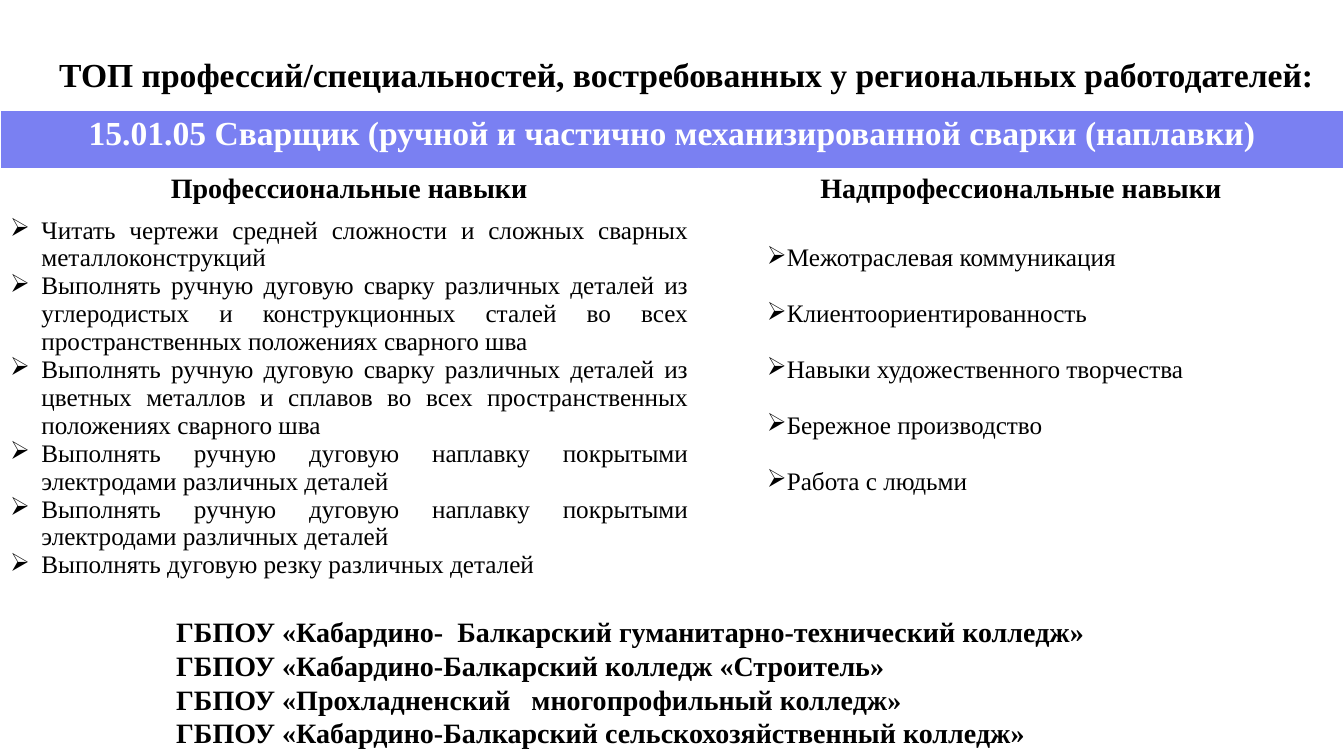
"""Build a slide on the skills of a welder and the colleges that teach the trade."""
from lxml.etree import SubElement
from pptx import Presentation
from pptx.dml.color import RGBColor
from pptx.enum.text import MSO_AUTO_SIZE, PP_ALIGN
from pptx.oxml.ns import qn
from pptx.util import Cm, Pt

COLORS = {"ink": "000000", "paper": "FFFFFF", "band": "7A80F2"}
FONT = "Times New Roman"


def write(frame, lines, size, bold=False, ink="ink", indent=None, **format):
    frame.word_wrap = True
    for i, line in enumerate(lines):
        para = frame.add_paragraph() if i else frame.paragraphs[0]
        for key, value in format.items():
            setattr(para, key, value)
        if indent:
            props = para._p.get_or_add_pPr()
            for key, value in zip(("marL", "indent"), indent):
                props.set(key, str(Cm(value)))
            SubElement(props, qn("a:buChar"), char="➢")
        run = para.add_run()
        run.text = line
        for key, value in {"name": FONT, "size": Pt(size), "bold": bold}.items():
            setattr(run.font, key, value)
        run.font.color.rgb = RGBColor.from_string(COLORS[ink])


def edge(cell, sides):
    props = cell._tc.get_or_add_tcPr()
    for side in sides:
        line = SubElement(props, qn(f"a:ln{side}"), w=str(Pt(1)))
        fill = SubElement(line, qn("a:solidFill"))
        SubElement(fill, qn("a:srgbClr"), val=COLORS["paper"])


deck = Presentation()
deck.slide_width, deck.slide_height = Cm(33.87), Cm(19.05)
slide = deck.slides.add_slide(deck.slide_layouts[6])

title = ["ТОП профессий/специальностей, востребованных у региональных работодателей:"]
schools = [
    "ГБПОУ «Кабардино-  Балкарский гуманитарно-технический колледж»",
    "ГБПОУ «Кабардино-Балкарский колледж «Строитель»",
    "ГБПОУ «Прохладненский   многопрофильный колледж»",
    "ГБПОУ «Кабардино-Балкарский сельскохозяйственный колледж»",
]
trade = ["15.01.05 Сварщик (ручной и частично механизированной сварки (наплавки)"]
heads = ["Профессиональные навыки", "Надпрофессиональные навыки"]
hard = [
    "Читать чертежи средней сложности и сложных сварных металлоконструкций",
    "Выполнять ручную дуговую сварку различных деталей из углеродистых и "
    "конструкционных сталей во всех пространственных положениях сварного шва",
    "Выполнять ручную дуговую сварку различных деталей из цветных металлов и "
    "сплавов во всех пространственных положениях сварного шва",
    "Выполнять ручную дуговую наплавку покрытыми электродами различных деталей",
    "Выполнять ручную дуговую наплавку покрытыми электродами различных деталей",
    "Выполнять дуговую резку различных деталей",
]
soft = [
    "Межотраслевая коммуникация",
    "Клиентоориентированность",
    "Навыки художественного творчества",
    "Бережное производство",
    "Работа с людьми",
]

widths, heights = (17.6, 16.26), (1.45, 1.09, 3.84)
table = slide.shapes.add_table(
    3, 2, Cm(0), Cm(2.79), Cm(sum(widths)), Cm(sum(heights))
).table
for key in ("first_row", "horz_banding"):
    setattr(table, key, False)
for column, width in zip(table.columns, widths):
    column.width = Cm(width)
for row, height in zip(table.rows, heights):
    row.height = Cm(height)

band = table.cell(0, 0)
band.merge(table.cell(0, 1))
edge(band, "LRT")
edge(table.cell(0, 1), "RT")
for cell in table.iter_cells():
    cell.fill.background()
band.fill.solid()
band.fill.fore_color.rgb = RGBColor.from_string(COLORS["band"])

write(band.text_frame, trade, 24, True, "paper", alignment=PP_ALIGN.CENTER)
for i, head in enumerate(heads):
    write(table.cell(1, i).text_frame, [head], 20, True, alignment=PP_ALIGN.CENTER)
write(table.cell(2, 0).text_frame, hard, 18, indent=(0.79, -0.79),
      alignment=PP_ALIGN.JUSTIFY)
write(table.cell(2, 1).text_frame, soft, 18, indent=(1.47, 0), line_spacing=2.0)

for lines, size, place in (
    (title, 24, (1.24, 1.24, 33.32, 1.27)),
    (schools, 20, (4.19, 15.37, 23.52, 3.68)),
):
    frame = slide.shapes.add_textbox(*map(Cm, place)).text_frame
    write(frame, lines, size, True)
    frame.auto_size = MSO_AUTO_SIZE.SHAPE_TO_FIT_TEXT

deck.save("out.pptx")
